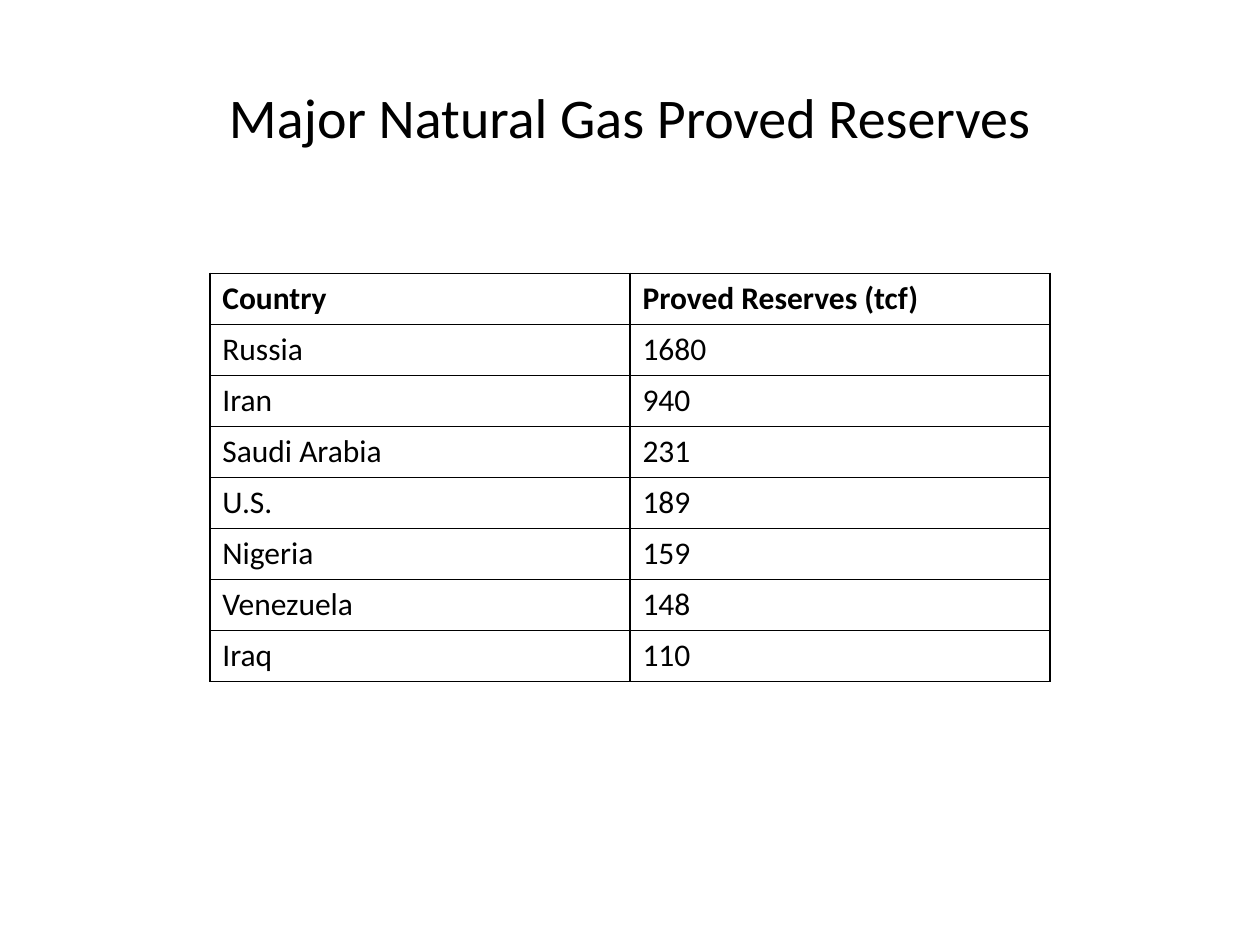
"""Build a slide with a table of major natural gas proved reserves."""
from lxml.etree import SubElement
from pptx import Presentation
from pptx.dml.color import RGBColor
from pptx.enum.text import MSO_ANCHOR, PP_ALIGN
from pptx.oxml.ns import qn
from pptx.util import Inches, Pt

TITLE = "Major Natural Gas Proved Reserves"
ROWS = [
    ("Country", "Proved Reserves (tcf)"),
    ("Russia", "1680"),
    ("Iran", "940"),
    ("Saudi Arabia", "231"),
    ("U.S.", "189"),
    ("Nigeria", "159"),
    ("Venezuela", "148"),
    ("Iraq", "110"),
]
COLORS = {"background": "FFFFFF", "text": "000000", "border": "000000"}
FONT = "Calibri"
SLIDE_WIDTH, SLIDE_HEIGHT = 10, 7.5
TABLE_TOP, TABLE_WIDTH, TABLE_HEIGHT = 2.17, 6.67, 3.24


def write_text(frame, text, size=18, bold=False, align=PP_ALIGN.LEFT, anchor=MSO_ANCHOR.TOP):
    frame.word_wrap = True
    frame.vertical_anchor = anchor
    paragraph = frame.paragraphs[0]
    paragraph.alignment = align
    run = paragraph.add_run()
    run.text = text
    run.font.name = FONT
    run.font.size = Pt(size)
    run.font.bold = bold
    run.font.color.rgb = RGBColor.from_string(COLORS["text"])


def add_borders(cell, width=1):
    properties = cell._tc.get_or_add_tcPr()
    for side in ("lnL", "lnR", "lnT", "lnB"):
        line = SubElement(properties, qn(f"a:{side}"), w=str(Pt(width)))
        fill = SubElement(line, qn("a:solidFill"))
        SubElement(fill, qn("a:srgbClr"), val=COLORS["border"])


def add_title(slide):
    margin = 0.5
    box = slide.shapes.add_textbox(
        Inches(margin), Inches(0.3), Inches(SLIDE_WIDTH - 2 * margin), Inches(1.25)
    )
    write_text(box.text_frame, TITLE, size=32, align=PP_ALIGN.CENTER, anchor=MSO_ANCHOR.MIDDLE)


def add_reserves_table(slide):
    column_count = len(ROWS[0])
    table = slide.shapes.add_table(
        len(ROWS), column_count,
        Inches((SLIDE_WIDTH - TABLE_WIDTH) / 2), Inches(TABLE_TOP),
        Inches(TABLE_WIDTH), Inches(TABLE_HEIGHT),
    ).table
    table.horz_banding = False
    for column in table.columns:
        column.width = Inches(TABLE_WIDTH / column_count)
    for row_index, values in enumerate(ROWS):
        table.rows[row_index].height = Inches(TABLE_HEIGHT / len(ROWS))
        for column_index, value in enumerate(values):
            cell = table.cell(row_index, column_index)
            add_borders(cell)
            cell.fill.background()
            write_text(cell.text_frame, value, bold=row_index == 0)


def main():
    presentation = Presentation()
    presentation.slide_width = Inches(SLIDE_WIDTH)
    presentation.slide_height = Inches(SLIDE_HEIGHT)
    slide = presentation.slides.add_slide(presentation.slide_layouts[6])
    background = slide.background.fill
    background.solid()
    background.fore_color.rgb = RGBColor.from_string(COLORS["background"])
    add_title(slide)
    add_reserves_table(slide)
    presentation.save("out.pptx")


if __name__ == "__main__":
    main()
